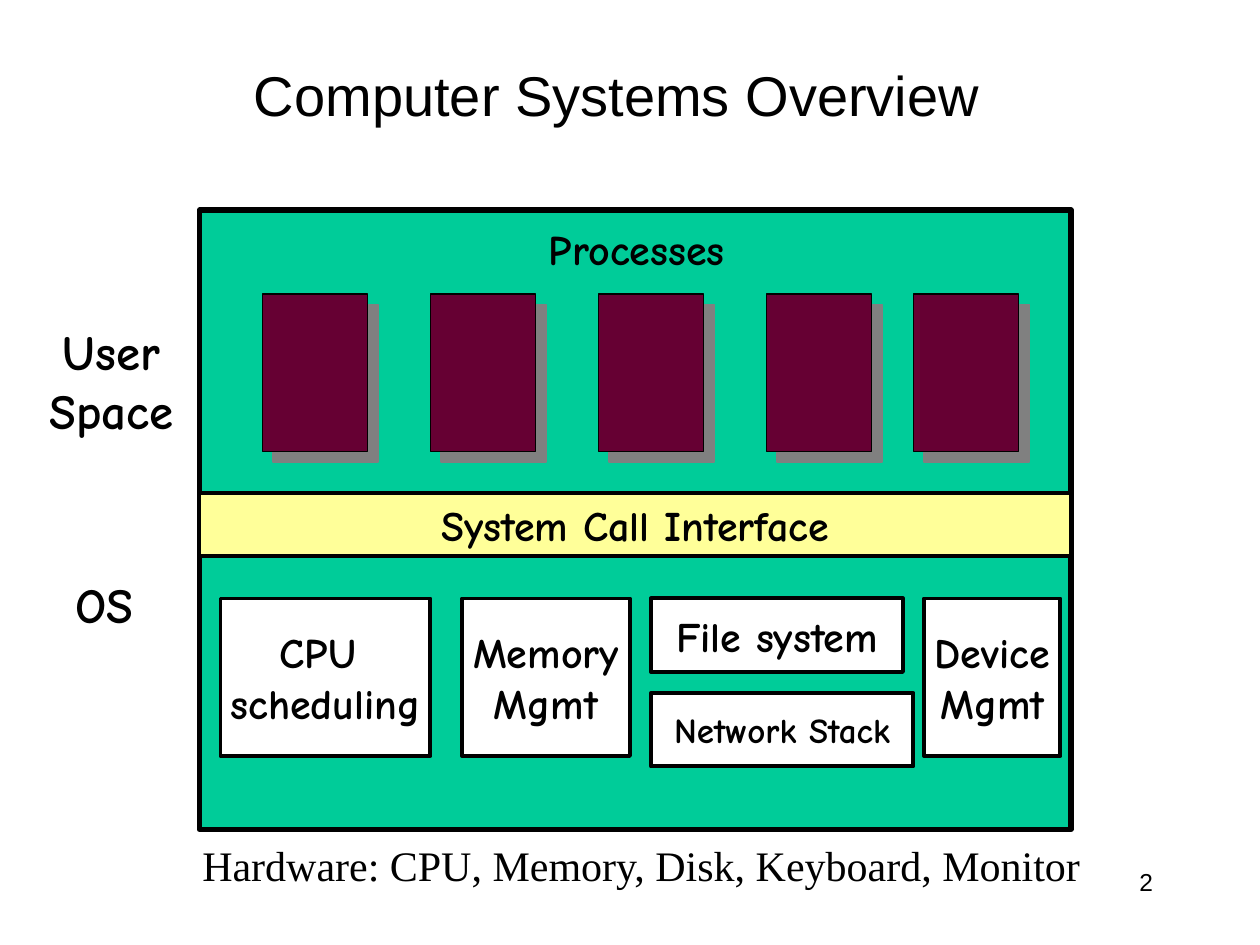
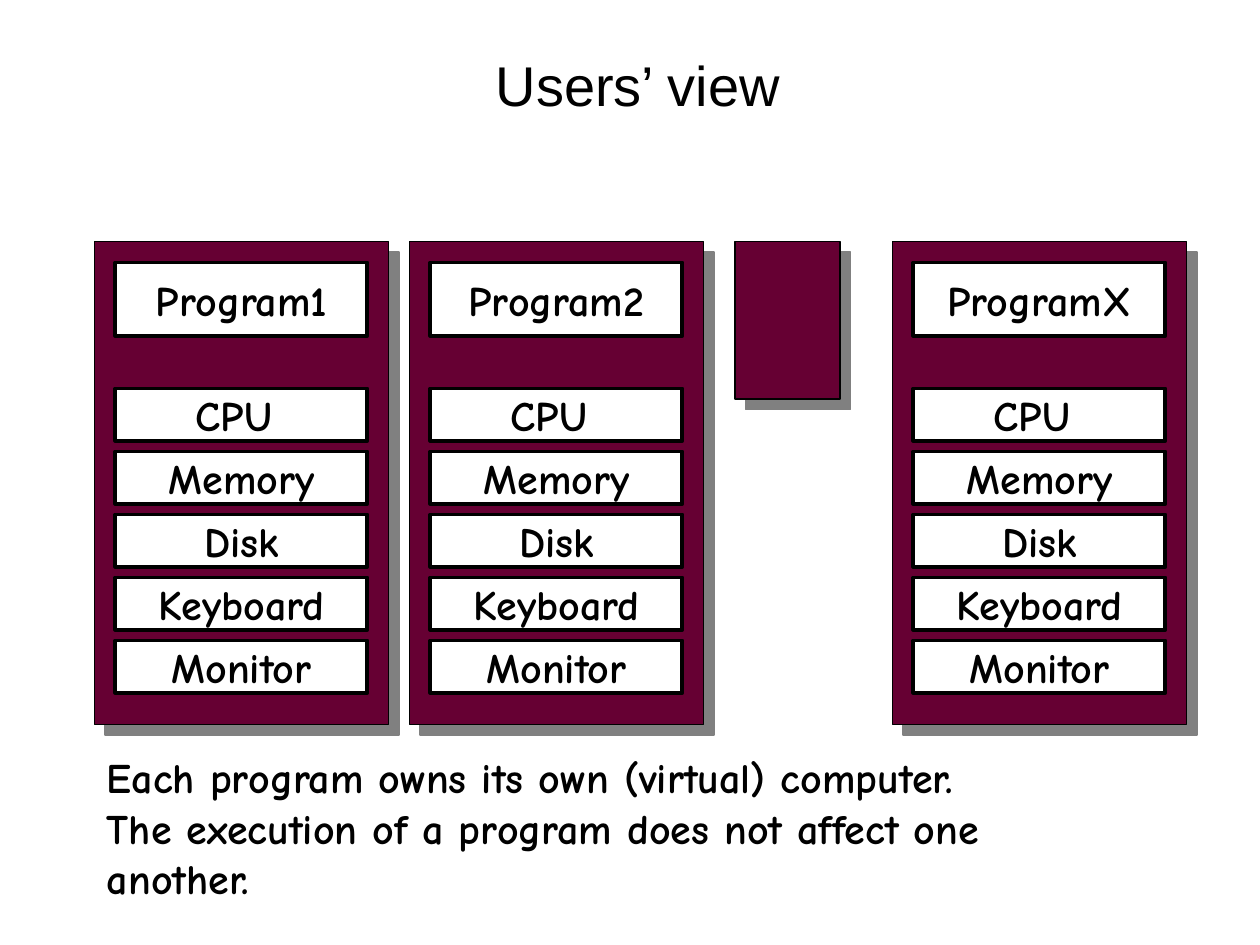
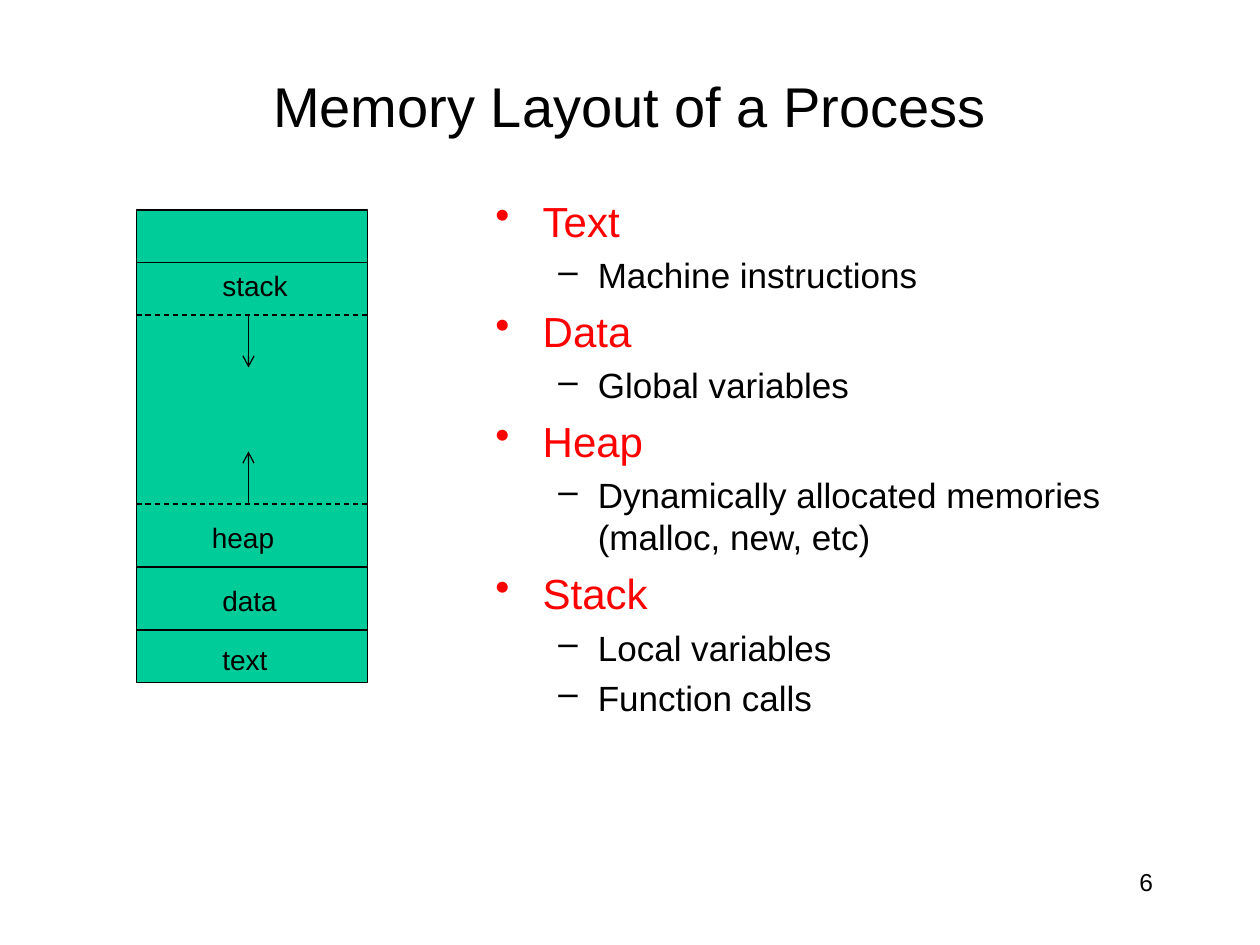
"""Build three slides on computer systems, the users' view and process memory."""
import lxml.etree
import pptx
import pptx.dml.color
import pptx.enum.dml
import pptx.enum.shapes
import pptx.enum.text
import pptx.oxml.ns
import pptx.util

Pt = pptx.util.Pt
qn = pptx.oxml.ns.qn
ALIGN = pptx.enum.text.PP_ALIGN
ANCHOR = pptx.enum.text.MSO_ANCHOR

COLORS = {
    "black": "000000",
    "white": "FFFFFF",
    "green": "00CC99",
    "maroon": "660033",
    "yellow": "FFFF99",
    "shadow": "808080",
    "red": "FF0000",
}
SANS, COMIC, SERIF = "Arial", "Comic Neue", "Times New Roman"


def rgb(name):
    """Return the named colour."""
    return pptx.dml.color.RGBColor.from_string(COLORS[name])


class Deck:
    """Hold the shared style and the current slide."""

    def __init__(self):
        """Start an empty 720 by 540 point presentation."""
        self.prs = pptx.Presentation()
        self.prs.slide_width, self.prs.slide_height = Pt(720), Pt(540)
        self.s = None

    def slide(self, title, *at):
        """Add a slide with a centred title."""
        self.s = self.prs.slides.add_slide(self.prs.slide_layouts[6])
        sp = self.text(title, *at, size=32, align=ALIGN.CENTER)
        sp.text_frame.vertical_anchor = ANCHOR.MIDDLE

    def style(self, p, size, font, color="black", bold=False):
        """Format every run of a paragraph."""
        for r in p.runs:
            r.font.size, r.font.name, r.font.bold = Pt(size), font, bold
            r.font.color.rgb = rgb(color)

    def text(self, text, x, y, w, h, size=16, font=SANS, align=ALIGN.LEFT):
        """Add a wrapped text box."""
        sp = self.s.shapes.add_textbox(Pt(x), Pt(y), Pt(w), Pt(h))
        tf = sp.text_frame
        tf.word_wrap = True
        tf.text = text
        for p in tf.paragraphs:
            p.alignment = align
            self.style(p, size, font, bold=font == COMIC)
        return sp

    def number(self, number):
        """Add the page number."""
        self.text(str(number), 516, 492, 150, 36, size=14, align=ALIGN.RIGHT)

    def rect(self, x, y, w, h, fill, width=0.75):
        """Add a filled rectangle with a black outline."""
        sp = self.s.shapes.add_shape(
            pptx.enum.shapes.MSO_SHAPE.RECTANGLE, Pt(x), Pt(y), Pt(w), Pt(h))
        sp.shadow.inherit = False
        sp.fill.solid()
        sp.fill.fore_color.rgb = rgb(fill)
        sp.line.color.rgb = rgb("black")
        sp.line.width = Pt(width)
        return sp

    def box(self, text, x, y, w, h, size=24, fill="white"):
        """Add a rectangle with a centred label."""
        tf = self.rect(x, y, w, h, fill, 2.25).text_frame
        tf.word_wrap = False
        tf.vertical_anchor = ANCHOR.MIDDLE
        tf.text = text
        for p in tf.paragraphs:
            p.alignment = ALIGN.CENTER
            self.style(p, size, COMIC, bold=True)

    def process(self, x, y, w=60, h=90):
        """Add a maroon block with a hard shadow."""
        sp = self.rect(x, y, w, h, "maroon")
        effects = sp._element.spPr.find(qn("a:effectLst"))
        shadow = lxml.etree.SubElement(
            effects, qn("a:outerShdw"), dist=str(Pt(8.5)), dir="2700000",
            algn="ctr", rotWithShape="0")
        lxml.etree.SubElement(shadow, qn("a:srgbClr"), val=COLORS["shadow"])

    def line(self, x1, y1, x2, y2, dashed=False, arrow=False):
        """Add a thin line, dashed or with an arrowhead on request."""
        c = self.s.shapes.add_connector(
            pptx.enum.shapes.MSO_CONNECTOR.STRAIGHT, Pt(x1), Pt(y1), Pt(x2), Pt(y2))
        c.line.color.rgb = rgb("black")
        c.line.width = Pt(0.75)
        if dashed:
            c.line.dash_style = pptx.enum.dml.MSO_LINE.DASH
        if arrow:
            lxml.etree.SubElement(c.line._get_or_add_ln(), qn("a:tailEnd"), type="arrow")
        lxml.etree.SubElement(c._element.spPr, qn("a:effectLst"))

    def bullets(self, items, x, y, w, h):
        """Add a two-level list from pairs of level and text."""
        levels = [(24, "red", "•", 27, -27), (20, "black", "–", 58.5, -22.5)]
        tf = self.text("\n".join(text for _, text in items), x, y, w, h).text_frame
        for p, (level, _) in zip(tf.paragraphs, items):
            size, color, mark, left, indent = levels[level]
            self.style(p, size, SANS, color)
            p.level = level
            p.space_before = Pt(size * 0.23)
            pPr = p._p.get_or_add_pPr()
            pPr.set("marL", str(Pt(left)))
            pPr.set("indent", str(Pt(indent)))
            lxml.etree.SubElement(pPr, qn("a:buChar"), char=mark)


def overview(d):
    """Draw the layers of a computer system."""
    d.slide("Computer Systems Overview ", 54, 30, 606, 48)
    d.rect(114, 120, 498, 354, "green", 3)
    d.text("User\nSpace", 16.5, 180, 94.5, 74, 28, COMIC, ALIGN.CENTER)
    d.text("OS", 36, 324.5, 56, 41, 28, COMIC)
    for x in (150, 246, 342, 438, 522):
        d.process(x, 168)
    d.box("CPU \nscheduling", 126, 342, 120, 90)
    d.box("Memory\nMgmt", 264, 342, 96, 90)
    d.box("File system", 372, 342, 144, 42)
    d.box("Device\nMgmt", 528, 342, 78, 90)
    d.text("Processes", 306.5, 124, 125.5, 36, 24, COMIC)
    d.box("Network Stack", 372, 396, 150, 42, size=20)
    d.box("System Call Interface", 114, 282, 498, 36, fill="yellow")
    d.number(2)
    d.text("Hardware: CPU, Memory, Disk, Keyboard, Monitor", 108.5, 476, 522, 36, 24, SERIF)


def users_view(d):
    """Draw one virtual computer per program."""
    d.slide("Users’ view ", 66, 12, 606, 72)
    parts = ("CPU ", "Memory", "Disk", "Keyboard", "Monitor")
    d.process(420, 138)
    for name, x in (("Program1", 54), ("Program2", 234), ("ProgramX", 510)):
        d.process(x, 138, 168, 276)
        d.box(name, x + 12, 150, 144, 42)
        for i, part in enumerate(parts):
            d.box(part, x + 12, 222 + 36 * i, 144, 30)
    d.text("Each program owns its own (virtual) computer.\n"
           "The execution of a program does not affect one\nanother.",
           54, 426, 600, 94, 24, COMIC)


def memory_layout(d):
    """Draw the memory segments of a process beside their contents."""
    d.slide("Memory Layout of a Process", 54, 30, 612, 60)
    d.bullets([
        (0, "Text"), (1, "Machine instructions"),
        (0, "Data"), (1, "Global variables"),
        (0, "Heap"), (1, "Dynamically allocated memories (malloc, new, etc)"),
        (0, "Stack"), (1, "Local variables"), (1, "Function calls"),
    ], 276, 108, 414, 372)
    d.number(6)
    left, width = 78, 132
    d.rect(left, 120, width, 270, "green")
    for y, dashed in ((150, False), (180, True), (288, True), (324, False), (360, False)):
        d.line(left, y, left + width, y, dashed=dashed)
    for name, x, y in (("stack", 120, 150), ("heap", 114, 294),
                       ("data", 120, 330), ("text", 120, 363.5)):
        d.text(name, x, y, 53.5, 26.5)
    for start, end in ((180, 210), (288, 258)):
        d.line(142, start, 142, end, arrow=True)


def main():
    """Build and save the presentation."""
    d = Deck()
    overview(d)
    users_view(d)
    memory_layout(d)
    d.prs.save("out.pptx")


if __name__ == "__main__":
    main()
